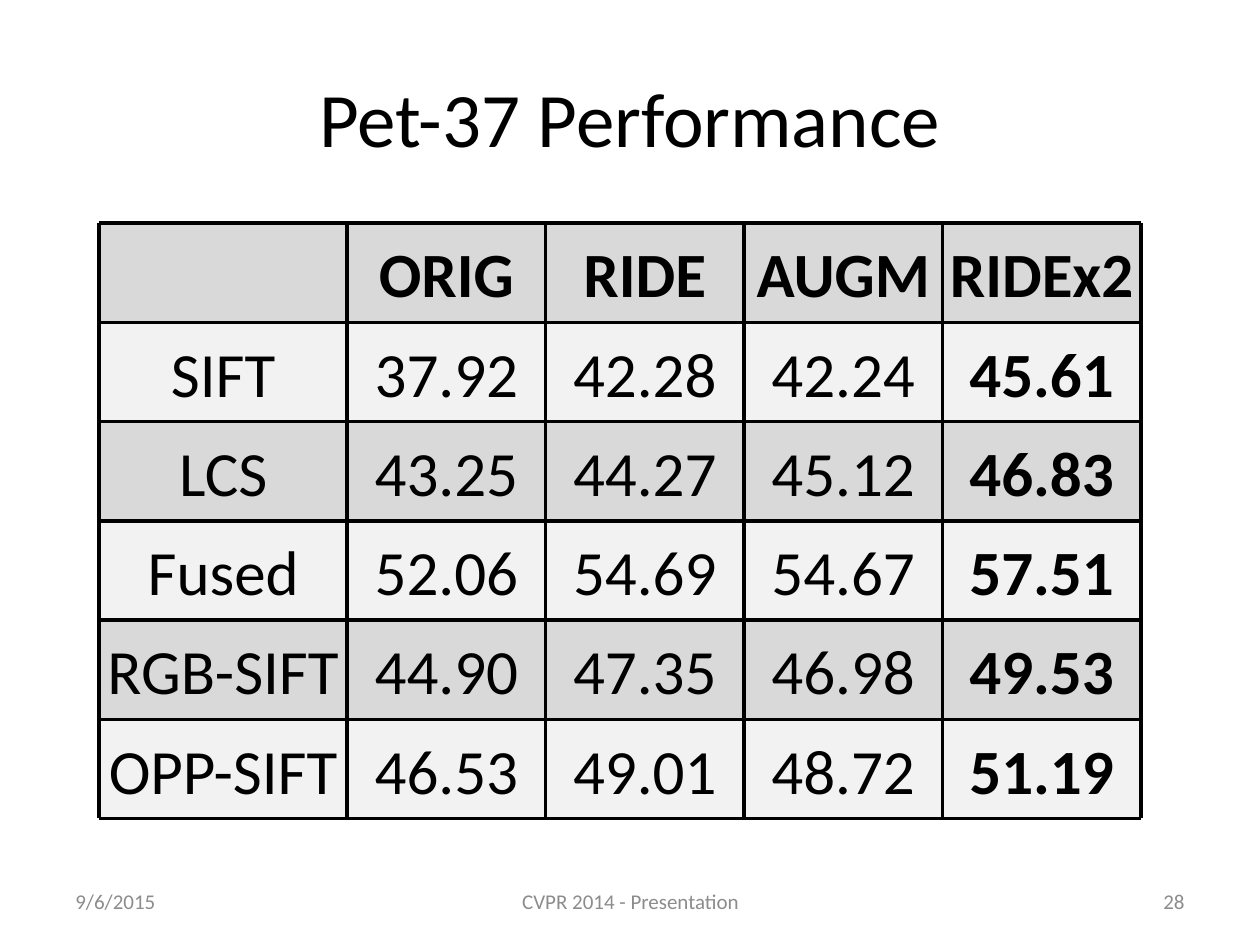
from dataclasses import dataclass
from itertools import accumulate

import pptx
import pptx.dml.color
import pptx.enum.shapes
import pptx.enum.text
import pptx.oxml.ns
import pptx.util
from lxml import etree
from pptx.util import Inches

ALIGN = pptx.enum.text.PP_ALIGN
MIDDLE = pptx.enum.text.MSO_ANCHOR.MIDDLE


@dataclass(frozen=True)
class Theme:
    font: str = "Calibri"
    ink: str = "000000"
    muted: str = "8C8C8C"
    bands: tuple = ("D9D9D9", "F2F2F2")
    title_size: int = 44
    grid_size: int = 36
    footer_size: int = 12
    rule_width: int = 2


THEME = Theme()
ROW_HEIGHT = 2 / 2.54  # the grid is laid out in steps of two centimetres
LEFT, TOP = ROW_HEIGHT, 2.25 * ROW_HEIGHT
LABEL_WIDTH, VALUE_WIDTH = 2.5 * ROW_HEIGHT, 2 * ROW_HEIGHT

RESULTS = [
    ("", "ORIG", "RIDE", "AUGM", "RIDEx2"),
    ("SIFT", "37.92", "42.28", "42.24", "45.61"),
    ("LCS", "43.25", "44.27", "45.12", "46.83"),
    ("Fused", "52.06", "54.69", "54.67", "57.51"),
    ("RGB-SIFT", "44.90", "47.35", "46.98", "49.53"),
    ("OPP-SIFT", "46.53", "49.01", "48.72", "51.19"),
]

FOOTERS = [
    ("9/6/2015", 0.5, 2.33, ALIGN.LEFT),
    ("CVPR 2014 - Presentation", 3.42, 3.17, ALIGN.CENTER),
    ("28", 7.17, 2.33, ALIGN.RIGHT),
]


def rgb(color):
    return pptx.dml.color.RGBColor.from_string(color)


def write(frame, text, *, size, color=THEME.ink, bold=False, align=ALIGN.CENTER):
    frame.word_wrap = True
    frame.vertical_anchor = MIDDLE
    para = frame.paragraphs[0]
    para.alignment = align
    span = para.add_run()
    span.text = text
    span.font.name = THEME.font
    span.font.size = pptx.util.Pt(size)
    span.font.bold = bold
    span.font.color.rgb = rgb(color)


def add_title(page, text):
    title = page.shapes.title
    title.left, title.top = Inches(0.5), Inches(0.3)
    title.width, title.height = Inches(9), Inches(1.25)
    write(title.text_frame, text, size=THEME.title_size)


def add_footer(page, text, left, width, align):
    box = page.shapes.add_textbox(Inches(left), Inches(6.95), Inches(width), Inches(0.4))
    write(box.text_frame, text, size=THEME.footer_size, color=THEME.muted, align=align)


def add_cell(page, text, left, top, width, *, fill, bold):
    cell = page.shapes.add_shape(
        pptx.enum.shapes.MSO_SHAPE.RECTANGLE,
        Inches(left), Inches(top), Inches(width), Inches(ROW_HEIGHT))
    cell.shadow.inherit = False
    cell.fill.solid()
    cell.fill.fore_color.rgb = rgb(fill)
    cell.line.fill.background()
    if text:
        frame = cell.text_frame
        frame.margin_left = frame.margin_right = 0
        frame.margin_top = frame.margin_bottom = Inches(0.05)
        write(frame, text, size=THEME.grid_size, bold=bold)


def add_rule(page, start, end):
    rule = page.shapes.add_connector(
        pptx.enum.shapes.MSO_CONNECTOR.STRAIGHT, *map(Inches, start + end))
    rule.line.color.rgb = rgb(THEME.ink)
    rule.line.width = pptx.util.Pt(THEME.rule_width)
    etree.SubElement(rule._element.spPr, pptx.oxml.ns.qn("a:effectLst"))


def add_results(page, rows):
    """Lay the banded cells out, then rule every column and row edge."""
    widths = [LABEL_WIDTH] + [VALUE_WIDTH] * (len(rows[0]) - 1)
    column_edges = list(accumulate(widths, initial=LEFT))
    row_edges = [TOP + index * ROW_HEIGHT for index in range(len(rows) + 1)]
    for row_index, values in enumerate(rows):
        for column_index, text in enumerate(values):
            is_key = row_index == 0 or column_index == len(values) - 1
            add_cell(page, text, column_edges[column_index], row_edges[row_index],
                     widths[column_index], fill=THEME.bands[row_index % 2], bold=is_key)
    for x in column_edges:
        add_rule(page, (x, row_edges[0]), (x, row_edges[-1]))
    for y in row_edges:
        add_rule(page, (column_edges[0], y), (column_edges[-1], y))


def main():
    deck = pptx.Presentation()
    deck.slide_width, deck.slide_height = Inches(10), Inches(7.5)
    page = deck.slides.add_slide(deck.slide_layouts.get_by_name("Title Only"))
    add_title(page, "Pet-37 Performance")
    for footer in FOOTERS:
        add_footer(page, *footer)
    add_results(page, RESULTS)
    deck.save("out.pptx")


if __name__ == "__main__":
    main()
